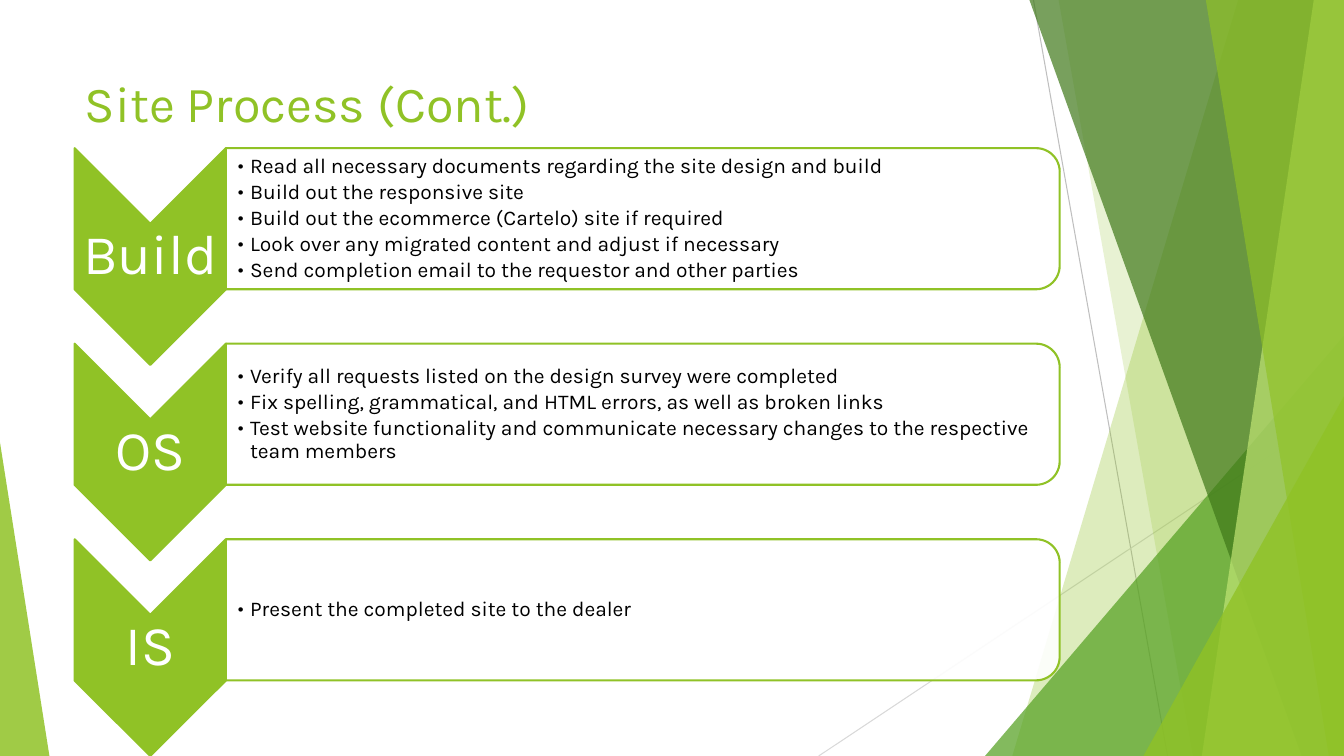
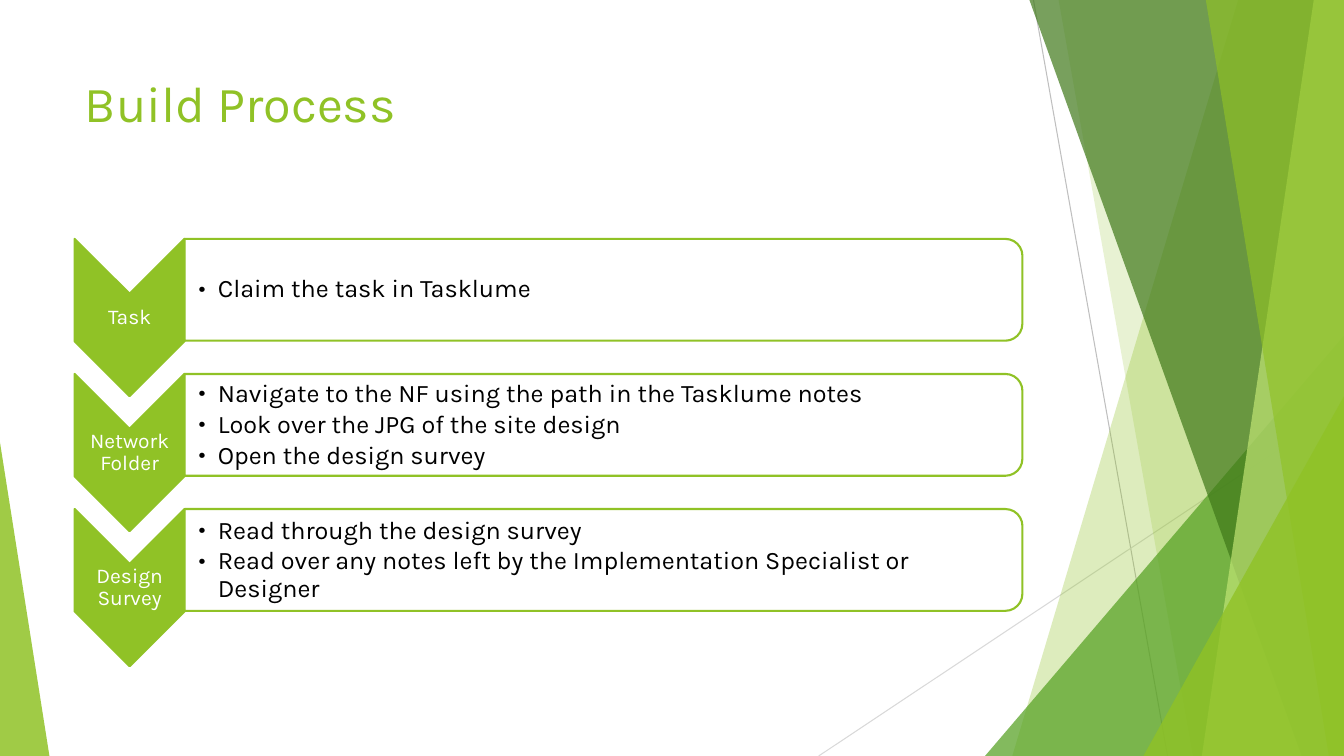
from lxml import etree
from pptx import Presentation
from pptx.dml.color import RGBColor
from pptx.enum.shapes import MSO_CONNECTOR, MSO_SHAPE
from pptx.enum.text import MSO_ANCHOR, MSO_AUTO_SIZE, PP_ALIGN
from pptx.oxml.ns import qn
from pptx.util import Inches, Pt

STRAIGHT = MSO_CONNECTOR.STRAIGHT
TRIANGLE = MSO_SHAPE.ISOSCELES_TRIANGLE
CHEVRON = MSO_SHAPE.CHEVRON
ROUNDED_BAR = MSO_SHAPE.ROUND_2_SAME_RECTANGLE
TOP, MIDDLE = MSO_ANCHOR.TOP, MSO_ANCHOR.MIDDLE
LEFT, CENTER = PP_ALIGN.LEFT, PP_ALIGN.CENTER
NO_AUTOFIT = MSO_AUTO_SIZE.NONE

FONT = "Karla"
GREEN, MID_GREEN, DARK_GREEN, LIME = "90C226", "54A021", "3F7819", "C0E474"
WHITE, BLACK = "FFFFFF", "000000"
WIDTH, HEIGHT = 13.33, 7.5
MARGIN = 0.74

# from x, from y, to x, to y, colour
RULES = [
    (10.25, 0, 11.58, HEIGHT, "BFBFBF"),
    (WIDTH, 4.03, 8.12, HEIGHT, "D9D9D9"),
]
# Back to front: colour, opacity, then either (top x, bottom x) of a panel
# that reaches the right edge, or (left, top, width, apex) of a triangle
PANELS = [
    (GREEN, 30, (12.28, 10.04)),
    (GREEN, 20, (10.5, 11.83)),
    (MID_GREEN, 72, (9.77, 3.33, 3.56, 1)),
    (DARK_GREEN, 70, (10.21, 12.91)),
    (LIME, 70, (13.03, 11.92)),
    (GREEN, 65, (11.96, 13.18)),
    (GREEN, 80, (11.34, 3.93, 1.99, 1)),
    (GREEN, 85, (0, 4.39, 0.49, 0)),
]
PAGES = [
    {
        "title": "Site Process (Cont.)",
        "top": 1.47, "pitch": 1.94,
        "chevron": (1.5, 2.15), "bar": (8.27, 1.4),
        "label_size": 40, "label_inset": 0.03,
        "text_size": 15, "text_inset": 0.12, "indent": 0.12,
        "steps": [
            ("Build", [
                "Read all necessary documents regarding the site design and build",
                "Build out the responsive site",
                "Build out the ecommerce (Cartelo) site if required",
                "Look over any migrated content and adjust if necessary",
                "Send completion email to the requestor and other parties",
            ]),
            ("OS", [
                "Verify all requests listed on the design survey were completed",
                "Fix spelling, grammatical, and HTML errors, as well as broken links",
                "Test website functionality and communicate necessary changes "
                "to the respective team members",
            ]),
            ("IS", ["Present the completed site to the dealer"]),
        ],
    },
    {
        "title": "Build Process",
        "top": 2.37, "pitch": 1.34,
        "chevron": (1.09, 1.56), "bar": (8.31, 1.01),
        "label_size": 15, "label_inset": 0.01,
        "text_size": 18, "text_inset": 0.14, "indent": 0.19,
        "steps": [
            ("Task", ["Claim the task in Tasklume"]),
            ("Network Folder", [
                "Navigate to the NF using the path in the Tasklume notes",
                "Look over the JPG of the site design",
                "Open the design survey",
            ]),
            ("Design Survey", [
                "Read through the design survey",
                "Read over any notes left by the Implementation Specialist or Designer",
            ]),
        ],
    },
]


def rgb(value):
    return RGBColor.from_string(value)


def paint(shape, color, opacity=100, outline=None):
    """Give a shape a flat fill, with an optional outline and no shadow."""
    shape.shadow.inherit = False
    shape.fill.solid()
    shape.fill.fore_color.rgb = rgb(color)
    if opacity < 100:
        solid = shape.element.spPr.find(qn("a:solidFill"))
        etree.SubElement(solid[0], qn("a:alpha"), val=str(opacity * 1000))
    if outline:
        shape.line.color.rgb = rgb(outline)
        shape.line.width = Pt(1.5)
    else:
        shape.line.fill.background()


prs = Presentation()
prs.slide_width, prs.slide_height = Inches(WIDTH), Inches(HEIGHT)
layout = prs.slide_layouts[5]
for ph in list(layout.placeholders):
    if ph.placeholder_format.idx:
        ph.element.getparent().remove(ph.element)
    else:
        ph.left, ph.top = Inches(MARGIN), Inches(0.67)
        ph.width, ph.height = Inches(9.4), Inches(1.44)
slides = [prs.slides.add_slide(layout) for page in PAGES]

# Shared backdrop: drawn as a group, then moved to the back of the layout
backdrop = slides[0].shapes.add_group_shape()
for x1, y1, x2, y2, color in RULES:
    rule = backdrop.shapes.add_connector(
        STRAIGHT, Inches(x1), Inches(y1), Inches(x2), Inches(y2))
    rule.line.color.rgb = rgb(color)
    rule.line.width = Pt(0.75)
    etree.SubElement(rule.element.spPr, qn("a:effectLst"))
for color, opacity, outline in PANELS:
    if len(outline) == 2:
        top_x, bottom_x = outline
        fb = backdrop.shapes.build_freeform(Inches(top_x), 0)
        corners = [(WIDTH, 0), (WIDTH, HEIGHT), (bottom_x, HEIGHT)]
        fb.add_line_segments([(Inches(x), Inches(y)) for x, y in corners])
        panel = fb.convert_to_shape()
    else:
        left, top, width, apex = outline
        panel = backdrop.shapes.add_shape(
            TRIANGLE, Inches(left), Inches(top), Inches(width), Inches(HEIGHT - top))
        panel.adjustments[0] = apex
    paint(panel, color, opacity)
layout.shapes.element.insert(2, backdrop.element)

for s, page in zip(slides, PAGES):
    tf = s.shapes.title.text_frame
    tf.auto_size = NO_AUTOFIT
    tf.vertical_anchor = TOP
    p = tf.paragraphs[0]
    p.alignment = LEFT
    r = p.add_run()
    r.text = page["title"]
    r.font.name, r.font.size = FONT, Pt(36)
    r.font.color.rgb = rgb(GREEN)

    chevron_w, chevron_h = page["chevron"]
    bar_w, bar_h = page["bar"]
    bar_x = MARGIN + chevron_w
    for i, (label, lines) in enumerate(page["steps"]):
        y = page["top"] + i * page["pitch"]

        # Both shapes are turned a quarter, so width and height swap
        for kind, x, w, h, color, opacity in [
            (CHEVRON, MARGIN, chevron_w, chevron_h, GREEN, 100),
            (ROUNDED_BAR, bar_x, bar_w, bar_h, WHITE, 90),
        ]:
            shape = s.shapes.add_shape(
                kind, Inches(x + (w - h) / 2), Inches(y + (h - w) / 2),
                Inches(h), Inches(w))
            shape.rotation = 90
            paint(shape, color, opacity, GREEN)

        label_h = chevron_h - chevron_w
        for x, top, w, h, inset, left_inset, size, color, texts, bulleted in [
            (MARGIN, y + chevron_w / 2, chevron_w, label_h, page["label_inset"],
             page["label_inset"], page["label_size"], WHITE, [label], False),
            (bar_x, y + bar_h * 0.05, bar_w - 0.06, bar_h * 0.9, 0.01,
             page["text_inset"], page["text_size"], BLACK, lines, True),
        ]:
            box = s.shapes.add_textbox(Inches(x), Inches(top), Inches(w), Inches(h))
            tf = box.text_frame
            tf.word_wrap = True
            tf.vertical_anchor = MIDDLE
            tf.margin_left = Inches(left_inset)
            tf.margin_right = tf.margin_top = tf.margin_bottom = Inches(inset)
            for n, text in enumerate(texts):
                p = tf.add_paragraph() if n else tf.paragraphs[0]
                p.alignment = LEFT if bulleted else CENTER
                p.line_spacing = 0.9
                if bulleted:
                    p.space_after = Pt(size * 0.15)
                    pPr = p._p.get_or_add_pPr()
                    pPr.set("marL", str(Inches(page["indent"])))
                    pPr.set("indent", str(-Inches(page["indent"])))
                    etree.SubElement(pPr, qn("a:buFont"), typeface=FONT)
                    etree.SubElement(pPr, qn("a:buChar"), char="•")
                r = p.add_run()
                r.text = text
                r.font.name, r.font.size = FONT, Pt(size)
                r.font.color.rgb = rgb(color)

prs.save("out.pptx")
